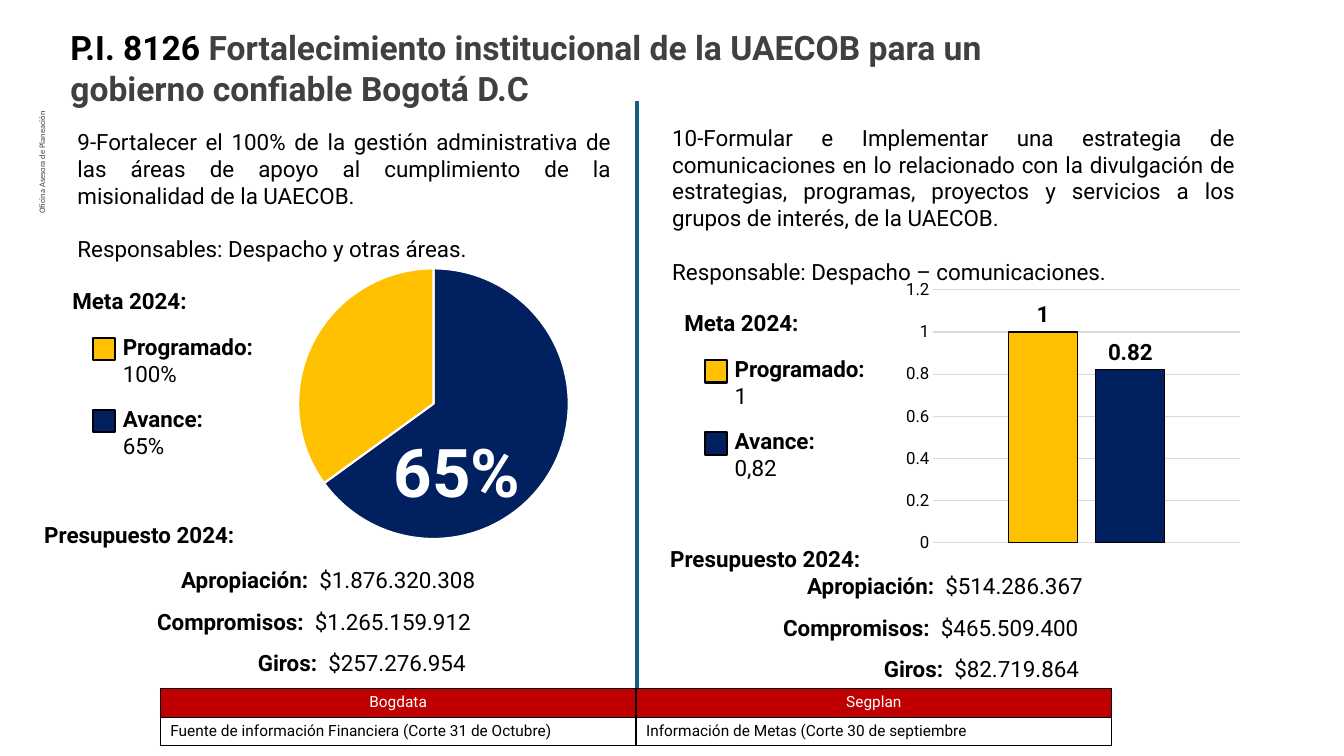
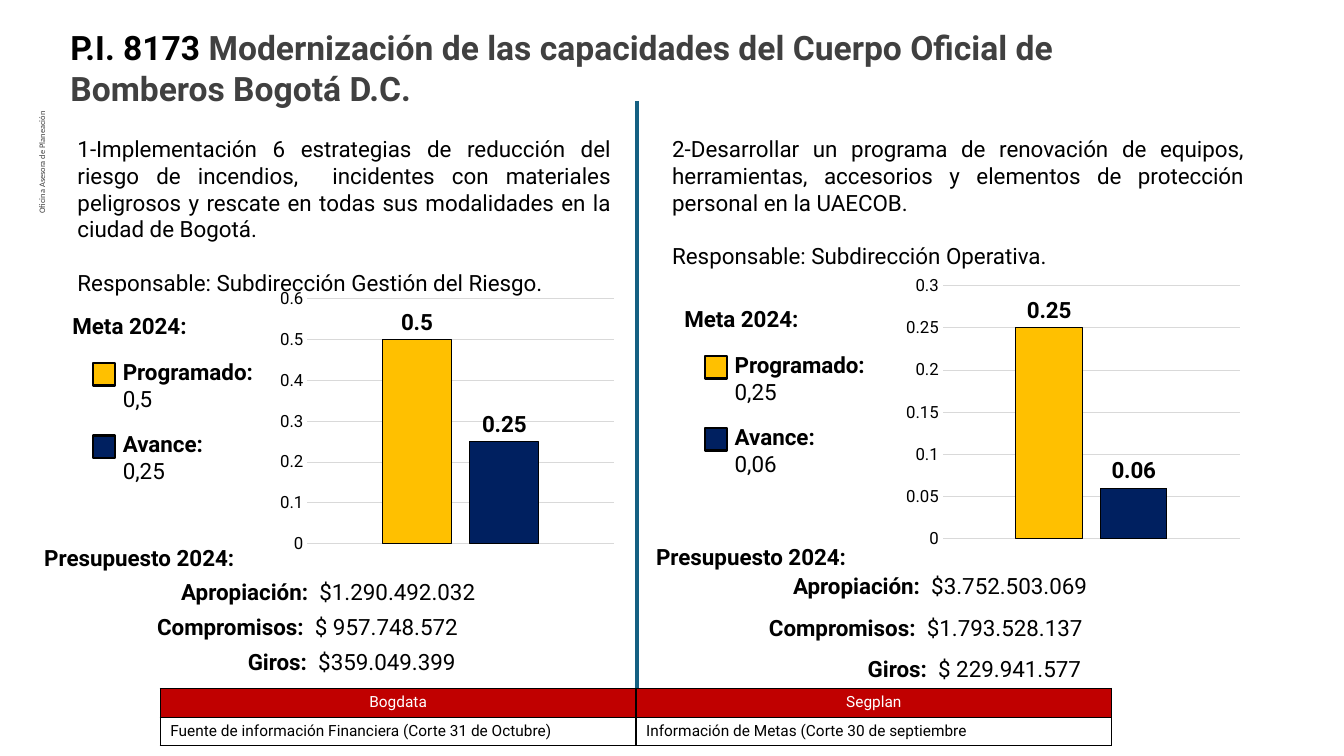
"""Builds two project progress slides, each comparing two goals and their budgets."""
from dataclasses import dataclass, field
from typing import Any, NamedTuple

from lxml.etree import SubElement
from pptx import Presentation
from pptx.chart.data import CategoryChartData
from pptx.dml.color import RGBColor
from pptx.enum.chart import XL_CHART_TYPE as ChartType
from pptx.enum.chart import XL_LABEL_POSITION as LabelPosition
from pptx.enum.chart import XL_TICK_MARK as TickMark
from pptx.enum.shapes import MSO_CONNECTOR as Connector
from pptx.enum.shapes import MSO_SHAPE as ShapeType
from pptx.enum.text import PP_ALIGN as Align
from pptx.oxml.ns import qn
from pptx.util import Inches, Length, Pt


@dataclass(frozen=True)
class Theme:
    black: str = "000000"
    white: str = "FFFFFF"
    gray: str = "404040"
    gridline: str = "D9D9D9"
    planned: str = "FFC000"
    progress: str = "002060"
    divider: str = "156082"
    header: str = "C00000"
    font: str = "Roboto"
    side_font: str = "Calibri"
    title_size: int = 24
    body_size: int = 16
    callout_size: int = 48
    axis_size: int = 12
    chart_size: int = 10
    table_size: int = 11
    side_size: int = 6


THEME = Theme()
CELL = 0.1
COLUMNS, ROWS = 133.33, 75


class Box(NamedTuple):
    left: float
    top: float
    width: float
    height: float

    def lengths(self) -> tuple[Length, ...]:
        return tuple(grid(value) for value in self)


@dataclass(frozen=True)
class Run:
    text: str
    bold: bool = False
    color: str = THEME.black
    size: float = THEME.body_size
    font: str = THEME.font


@dataclass(frozen=True)
class Line:
    runs: tuple[Run, ...]
    align: Align = Align.JUSTIFY
    spacing: float = 1.0


@dataclass(frozen=True)
class Chart:
    kind: ChartType
    box: Box
    values: tuple[float, float]
    callout: str = ""


@dataclass(frozen=True)
class Budget:
    left: float
    top: float
    first_row: float
    step: float
    amounts: tuple[str, str, str]
    indents: tuple[float, float, float] = (13.6, 11.2, 21.2)


@dataclass(frozen=True)
class Panel:
    left: float
    statement_box: Box
    statement: str
    owner: str
    goal_top: float
    planned: str
    progress: str
    chart: Chart
    budget: Budget


@dataclass(frozen=True)
class Project:
    code: str
    name: str
    panels: tuple[Panel, ...] = field(default_factory=tuple)


LEFT, RIGHT = 6.2, 66.9
COLUMN = ChartType.COLUMN_CLUSTERED
BUDGET_LABELS = ("Apropiación: ", "Compromisos: ", "Giros: ")
SOURCES = (
    ("Bogdata", "Segplan"),
    ("Fuente de información Financiera (Corte 31 de Octubre)",
     "Información de Metas (Corte 30 de septiembre"),
)
PROJECTS = (
    Project("P.I. 8126 ", "Fortalecimiento institucional de la UAECOB para un gobierno confiable Bogotá D.C", (
        Panel(LEFT, Box(6.7, 12.2, 54.9, 13.7),
              "9-Fortalecer el 100% de la gestión administrativa de las áreas de apoyo al "
              "cumplimiento de la misionalidad de la UAECOB.",
              "Responsables: Despacho y otras áreas.", 28, "100%", "65%",
              Chart(ChartType.PIE, Box(28.2, 24.8, 29.6, 30.5), (65, 35), "65%"),
              Budget(3.4, 51.2, 55.7, 4.1,
                     ("$1.876.320.308", "$1.265.159.912", "$257.276.954"))),
        Panel(RIGHT, Box(65.7, 11.8, 57.8, 16.4),
              "10-Formular e Implementar una estrategia de comunicaciones en lo relacionado con "
              "la divulgación de estrategias, programas, proyectos y servicios a los grupos de "
              "interés, de la UAECOB.",
              "Responsable: Despacho – comunicaciones.", 30.2, "1", "0,82",
              Chart(COLUMN, Box(89.2, 27.2, 34.5, 28.2), (1, 0.82)),
              Budget(65.5, 53.6, 56.3, 4.1,
                     ("$514.286.367", "$465.509.400", "$82.719.864"))),
    )),
    Project("P.I. 8173 ", "Modernización de las capacidades del Cuerpo Oficial de Bomberos Bogotá D.C.", (
        Panel(LEFT, Box(6.7, 12.9, 54.9, 16.4),
              "1-Implementación 6 estrategias de reducción del riesgo de incendios,  incidentes "
              "con materiales peligrosos y rescate en todas sus modalidades en la ciudad de Bogotá.",
              "Responsable: Subdirección Gestión del Riesgo.", 30.5, "0,5", "0,25",
              Chart(COLUMN, Box(27.1, 28.1, 34.5, 27.4), (0.5, 0.25)),
              Budget(3.4, 53.5, 56.9, 3.45,
                     ("$1.290.492.032", "$ 957.748.572", "$359.049.399"), (13.6, 11.2, 20.2))),
        Panel(RIGHT, Box(65.7, 12.9, 58.7, 13.7),
              "2-Desarrollar un programa de renovación de equipos, herramientas, accesorios y "
              "elementos de protección personal en la UAECOB.",
              "Responsable: Subdirección Operativa.", 29.8, "0,25", "0,06",
              Chart(COLUMN, Box(89.2, 26.8, 34.5, 28.2), (0.25, 0.06)),
              Budget(64.1, 53.4, 56.3, 4.1,
                     ("$3.752.503.069", "$1.793.528.137", "$ 229.941.577"), (13.6, 11.2, 21))),
    )),
)


def grid(cells: float) -> Length:
    return Inches(cells * CELL)


def apply(target: Any, **values: Any) -> None:
    for name, value in values.items():
        setattr(target, name, value)


def paint(fill: Any, color: str) -> None:
    fill.solid()
    fill.fore_color.rgb = RGBColor.from_string(color)


def outline(line: Any, color: str, width: float) -> None:
    line.color.rgb = RGBColor.from_string(color)
    line.width = Pt(width)


def style_font(font: Any, size: float, bold: bool = False,
               color: str = THEME.black, name: str = THEME.font) -> None:
    apply(font, size=Pt(size), bold=bold, name=name)
    font.color.rgb = RGBColor.from_string(color)


def fill_frame(frame: Any, lines: tuple[Line, ...]) -> None:
    for index, line in enumerate(lines):
        paragraph = frame.add_paragraph() if index else frame.paragraphs[0]
        apply(paragraph, alignment=line.align, line_spacing=line.spacing)
        for part in line.runs:
            run = paragraph.add_run()
            run.text = part.text
            style_font(run.font, part.size, part.bold, part.color, part.font)


def add_text(slide: Any, box: Box, *lines: Line) -> Any:
    shape = slide.shapes.add_textbox(*box.lengths())
    shape.text_frame.word_wrap = True
    fill_frame(shape.text_frame, lines)
    return shape


def add_pie(slide: Any, chart_data: Chart) -> None:
    data = CategoryChartData()
    data.categories = ("1", "2")
    data.add_series("Series 1", chart_data.values)
    chart = slide.shapes.add_chart(chart_data.kind, *chart_data.box.lengths(), data).chart
    apply(chart, has_legend=False, has_title=False)
    style_font(chart.font, THEME.chart_size)
    for index, color in enumerate((THEME.progress, THEME.planned)):
        point = chart.plots[0].series[0].points[index]
        paint(point.format.fill, color)
        outline(point.format.line, THEME.white, 1.5)
    add_text(slide, Box(32.1, 42.2, 26.5, 9.1),
             Line((Run(chart_data.callout, True, THEME.white, THEME.callout_size),), Align.CENTER))


def add_columns(slide: Any, chart_data: Chart) -> None:
    data = CategoryChartData()
    data.categories = ("1",)
    for number, value in enumerate(chart_data.values, 1):
        data.add_series(f"Series {number}", (value,))
    chart = slide.shapes.add_chart(chart_data.kind, *chart_data.box.lengths(), data).chart
    apply(chart, has_legend=False, has_title=False)
    style_font(chart.font, THEME.chart_size)
    chart.category_axis.visible = False
    axis = chart.value_axis
    apply(axis, has_major_gridlines=True, major_tick_mark=TickMark.NONE, minor_tick_mark=TickMark.NONE)
    axis.format.line.fill.background()
    outline(axis.major_gridlines.format.line, THEME.gridline, 0.75)
    style_font(axis.tick_labels.font, THEME.axis_size)
    plot = chart.plots[0]
    apply(plot, gap_width=219, overlap=-27, vary_by_categories=False)
    for series, color in zip(plot.series, (THEME.planned, THEME.progress)):
        paint(series.format.fill, color)
        outline(series.format.line, THEME.black, 0.75)
        apply(series.data_labels, show_value=True, position=LabelPosition.OUTSIDE_END)
        style_font(series.data_labels.font, THEME.body_size, True)


def add_goal(slide: Any, panel: Panel) -> None:
    add_text(slide, Box(panel.left, panel.goal_top, 18.7, 3.7), Line((Run("Meta 2024:", True),)))
    entries = (("Programado:", panel.planned, THEME.planned), ("Avance:", panel.progress, THEME.progress))
    for index, (label, value, color) in enumerate(entries):
        top = panel.goal_top + 4.55 + 7.15 * index
        add_text(slide, Box(panel.left + 5, top, 18.2, 6.4),
                 Line((Run(label, True),)), Line((Run(value),)))
        swatch = slide.shapes.add_shape(ShapeType.RECTANGLE, *Box(panel.left + 3, top + 1, 2.2, 2.2).lengths())
        swatch.shadow.inherit = False
        paint(swatch.fill, color)
        outline(swatch.line, THEME.black, 1.5)


def add_budget(slide: Any, budget: Budget) -> None:
    add_text(slide, Box(budget.left, budget.top, 27.2, 3.7), Line((Run("Presupuesto 2024:", True),)))
    for row, (label, amount, indent) in enumerate(zip(BUDGET_LABELS, budget.amounts, budget.indents)):
        add_text(slide, Box(budget.left + indent, budget.first_row + budget.step * row, 37.3, 3.7),
                 Line((Run(label, True), Run(f" {amount}"))))


def add_panel(slide: Any, panel: Panel) -> None:
    draw_chart = add_pie if panel.chart.kind == ChartType.PIE else add_columns
    draw_chart(slide, panel.chart)
    add_text(slide, panel.statement_box, Line((Run(panel.statement),)), Line((Run(panel.owner),), spacing=2.0))
    add_goal(slide, panel)
    add_budget(slide, panel.budget)


def add_borders(cell: Any) -> None:
    properties = cell._tc.get_or_add_tcPr()
    for side in ("a:lnL", "a:lnR", "a:lnT", "a:lnB"):
        border = SubElement(properties, qn(side), w=str(Pt(1)))
        SubElement(SubElement(border, qn("a:solidFill")), qn("a:srgbClr"), val=THEME.black)


def add_sources(slide: Any) -> None:
    table = slide.shapes.add_table(2, 2, *Box(15.9, 68.3, 94.4, 5.7).lengths()).table
    apply(table, first_row=False, horz_banding=False)
    for row, texts in enumerate(SOURCES):
        color, align = (THEME.black, Align.LEFT) if row else (THEME.white, Align.CENTER)
        for column, text in enumerate(texts):
            cell = table.cell(row, column)
            add_borders(cell)
            if row:
                cell.fill.background()
            else:
                paint(cell.fill, THEME.header)
            fill_frame(cell.text_frame, (Line((Run(text, color=color, size=THEME.table_size),), align),))


def add_frame(slide: Any, project: Project) -> None:
    add_text(slide, Box(6, 2.2, 103, 9.1), Line((
        Run(project.code, True, THEME.black, THEME.title_size),
        Run(project.name, True, THEME.gray, THEME.title_size)), Align.LEFT))
    side = add_text(slide, Box(-8.8, 22.4, 25.9, 1.8), Line((
        Run("Oficina Asesora de Planeación", False, THEME.gray, THEME.side_size, THEME.side_font),), Align.RIGHT))
    side.rotation = 270
    apply(side.text_frame, margin_left=grid(0.7), margin_right=grid(0.7),
          margin_top=grid(0.4), margin_bottom=grid(0.4))
    divider = slide.shapes.add_connector(Connector.STRAIGHT, grid(63.2), grid(10), grid(63.2), grid(69.3))
    outline(divider.line, THEME.divider, 2.25)
    SubElement(divider._element.spPr, qn("a:effectLst"))


def main() -> None:
    presentation = Presentation()
    apply(presentation, slide_width=grid(COLUMNS), slide_height=grid(ROWS))
    for project in PROJECTS:
        slide = presentation.slides.add_slide(presentation.slide_layouts[6])
        add_frame(slide, project)
        for panel in project.panels:
            add_panel(slide, panel)
        add_sources(slide)
    presentation.save("out.pptx")


if __name__ == "__main__":
    main()
